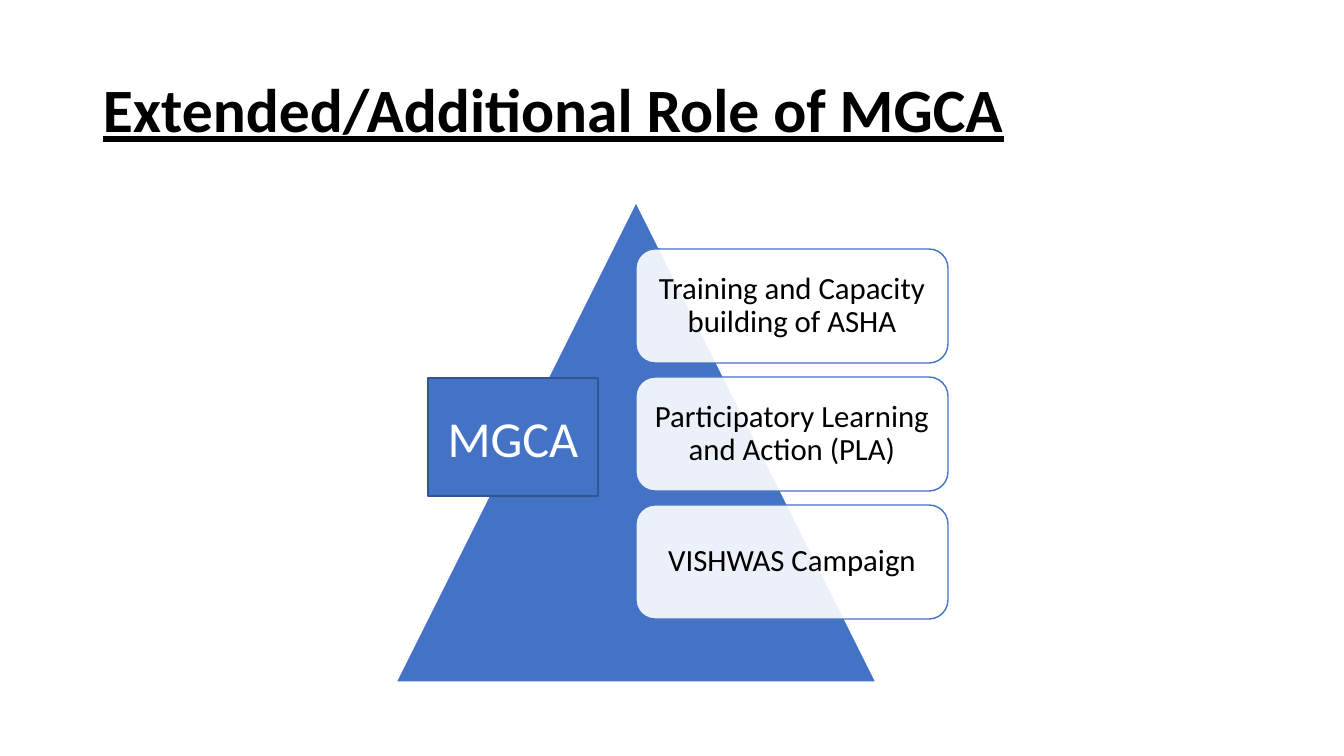
from lxml.etree import SubElement
from pptx import Presentation
from pptx.dml.color import RGBColor
from pptx.enum.shapes import MSO_SHAPE as Shape
from pptx.enum.text import MSO_ANCHOR as Anchor, MSO_AUTO_SIZE as AutoSize, PP_ALIGN as Align
from pptx.oxml.ns import qn
from pptx.util import Pt

EMU_PER_PX = 914400 / 100.8
BLUE = RGBColor(0x44, 0x72, 0xC4)
DARK_BLUE = RGBColor(0x32, 0x54, 0x91)
WHITE = RGBColor(0xFF, 0xFF, 0xFF)
BLACK = RGBColor(0x00, 0x00, 0x00)

ROLES = [
    "Training and Capacity building of ASHA",
    "Participatory Learning and Action (PLA)",
    "VISHWAS Campaign",
]


def px(length):
    return round(length * EMU_PER_PX)


class SlideBuilder:
    font_name = "Calibri"

    def __init__(self, presentation):
        self.slide = presentation.slides.add_slide(presentation.slide_layouts[5])

    def add_text(self, shape, text, size, color, align, spacing=1.0, inset=10):
        frame = shape.text_frame
        frame.word_wrap = True
        frame.auto_size = AutoSize.NONE
        frame.vertical_anchor = Anchor.MIDDLE
        frame.margin_left = frame.margin_right = px(inset)
        frame.margin_top = frame.margin_bottom = px(5)
        paragraph = frame.paragraphs[0]
        paragraph.alignment = align
        paragraph.line_spacing = spacing
        run = paragraph.add_run()
        run.text = text
        run.font.name = self.font_name
        run.font.size = Pt(size)
        run.font.color.rgb = color
        return run

    def title(self, text, left, top, width, height):
        shape = self.slide.shapes.title
        shape.left, shape.top = px(left), px(top)
        shape.width, shape.height = px(width), px(height)
        run = self.add_text(shape, text, 44, BLACK, Align.LEFT, spacing=0.9)
        run.font.bold = True
        run.font.underline = True

    def shape(self, kind, left, top, width, height, fill, line):
        shape = self.slide.shapes.add_shape(kind, px(left), px(top), px(width), px(height))
        shape.shadow.inherit = False
        shape.fill.solid()
        shape.fill.fore_color.rgb = fill
        shape.line.color.rgb = line
        shape.line.width = Pt(1)
        return shape

    def card(self, text, left, top, width, height):
        shape = self.shape(Shape.ROUNDED_RECTANGLE, left, top, width, height, WHITE, BLUE)
        # 90 % opaque, so the triangle shows through
        color = shape.element.spPr.find(qn("a:solidFill"))[0]
        SubElement(color, qn("a:alpha"), val="90000")
        self.add_text(shape, text, 22, BLACK, Align.CENTER, spacing=0.9, inset=9)

    def label(self, text, left, top, width, height):
        shape = self.shape(Shape.RECTANGLE, left, top, width, height, BLUE, DARK_BLUE)
        self.add_text(shape, text, 36, WHITE, Align.CENTER)


def main():
    presentation = Presentation()
    presentation.slide_width, presentation.slide_height = px(1344), px(756)
    builder = SlideBuilder(presentation)

    # Heading
    builder.title("Extended/Additional Role of MGCA", 93, 40, 1159, 146)

    # Pyramid with one card per role
    builder.shape(Shape.ISOSCELES_TRIANGLE, 396, 202, 480, 480, BLUE, WHITE)
    for index, role in enumerate(ROLES):
        builder.card(role, 636, 249 + 128 * index, 312, 114)

    # Name of the pyramid
    builder.label("MGCA", 428, 378, 170, 118)

    presentation.save("out.pptx")


if __name__ == "__main__":
    main()
